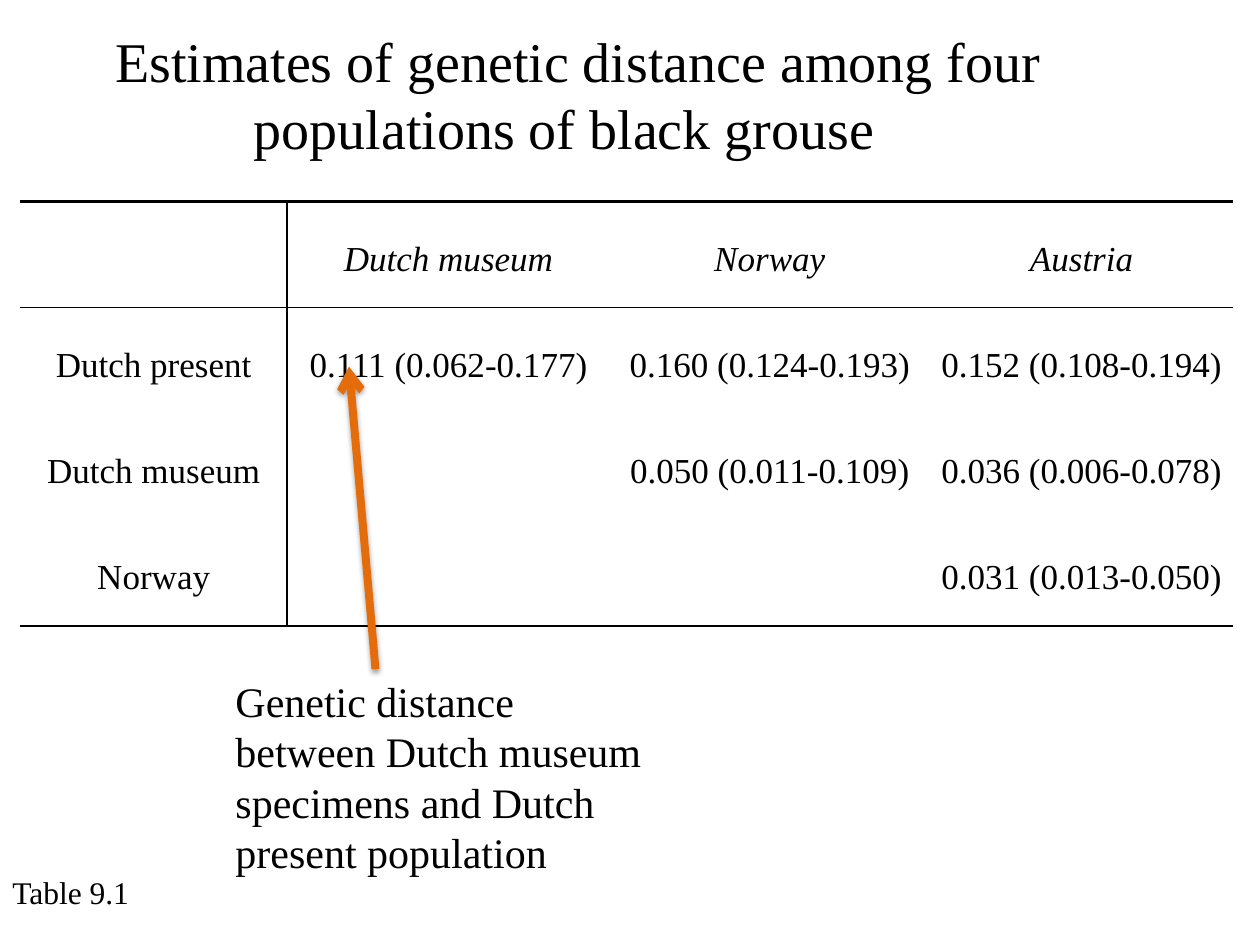
from lxml.etree import SubElement
from pptx import Presentation
from pptx.dml.color import RGBColor
from pptx.enum.shapes import MSO_CONNECTOR
from pptx.enum.text import MSO_AUTO_SIZE, PP_ALIGN
from pptx.oxml.ns import qn
from pptx.util import Inches, Pt

COLORS = {"ink": "000000", "arrow": "E46C0A"}
FONT = "Times New Roman"
COLUMNS, ROWS = 100, 75  # layout grid of the slide

HEADINGS = ["", "Dutch museum", "Norway", "Austria"]
DISTANCES = [
    ["Dutch present", "0.111 (0.062-0.177)", "0.160 (0.124-0.193)", "0.152 (0.108-0.194)"],
    ["Dutch museum", "", "0.050 (0.011-0.109)", "0.036 (0.006-0.078)"],
    ["Norway", "", "", "0.031 (0.013-0.050)"],
]


def write_text(frame, text, size=20, italic=False, align=PP_ALIGN.LEFT, spacing=None):
    paragraph = frame.paragraphs[0]
    paragraph.alignment = align
    paragraph.line_spacing = spacing
    run = paragraph.add_run()
    run.text = text
    run.font.name = FONT
    run.font.size = Pt(size)
    run.font.italic = italic
    run.font.color.rgb = RGBColor.from_string(COLORS["ink"])


def add_color(parent, color):
    fill = SubElement(parent, qn("a:solidFill"))
    return SubElement(fill, qn("a:srgbClr"), val=COLORS[color])


def set_borders(cell, widths):
    """Draw the given sides (L, R, T, B) in points; the others stay empty."""
    properties = cell._tc.get_or_add_tcPr()
    for side in "LRTB":
        width = widths.get(side, 0)
        line = SubElement(properties, qn(f"a:ln{side}"), w=str(Pt(width)))
        if width:
            add_color(line, "ink")
        else:
            SubElement(line, qn("a:noFill"))


class SlideBuilder:
    def __init__(self, presentation):
        self.slide = presentation.slides.add_slide(presentation.slide_layouts[6])
        self.column = presentation.slide_width / COLUMNS
        self.row = presentation.slide_height / ROWS

    def place(self, *lengths):
        """Turn alternating grid columns and rows into slide lengths."""
        units = (self.column, self.row)
        return [round(length * units[i % 2]) for i, length in enumerate(lengths)]

    def text(self, box, text, wrap=True, **style):
        frame = self.slide.shapes.add_textbox(*self.place(*box)).text_frame
        frame.word_wrap = wrap
        frame.auto_size = MSO_AUTO_SIZE.SHAPE_TO_FIT_TEXT
        write_text(frame, text, **style)

    def table(self, left, top, widths, height, records):
        box = self.place(left, top, sum(widths), height * len(records))
        table = self.slide.shapes.add_table(len(records), len(widths), *box).table
        table.first_row = table.horz_banding = False
        for column, width in zip(table.columns, widths):
            column.width = round(width * self.column)
        last = len(records) - 1
        for r, record in enumerate(records):
            table.rows[r].height = round(height * self.row)
            for c, text in enumerate(record):
                cell = table.cell(r, c)
                cell.margin_left = cell.margin_right = Inches(0.07)
                cell.margin_top = cell.margin_bottom = 0
                # Rules: above and below the table, under the head, beside the stub
                set_borders(cell, {
                    "L": 1 if c == 1 else 0,
                    "R": 1 if c == 0 else 0,
                    "T": {0: 1.5, 1: 1}.get(r, 0),
                    "B": {0: 1, last: 1.5}.get(r, 0),
                })
                cell.fill.background()
                if text:
                    write_text(cell.text_frame, text, italic=r == 0,
                               align=PP_ALIGN.CENTER, spacing=2.0)

    def arrow(self, start, end, color, width):
        connector = self.slide.shapes.add_connector(
            MSO_CONNECTOR.STRAIGHT, *self.place(*start, *end))
        connector.line.color.rgb = RGBColor.from_string(COLORS[color])
        connector.line.width = Pt(width)
        SubElement(connector.line._get_or_add_ln(), qn("a:tailEnd"), type="arrow")
        # Soft shadow straight below
        effects = SubElement(connector._element.spPr, qn("a:effectLst"))
        shadow = SubElement(effects, qn("a:outerShdw"), blurRad=str(Pt(3.1)),
                            dist=str(Pt(1.6)), dir="5400000", rotWithShape="0")
        SubElement(add_shadow_color(shadow), qn("a:alpha"), val="38000")


def add_shadow_color(shadow):
    return SubElement(shadow, qn("a:srgbClr"), val=COLORS["ink"])


def main():
    presentation = Presentation()
    presentation.slide_width, presentation.slide_height = Inches(10), Inches(7.5)
    builder = SlideBuilder(presentation)

    # Distance table
    builder.table(1.6, 16, [21.2, 25.6, 25.4, 24.1], 8.42, [HEADINGS, *DISTANCES])

    # Title
    builder.text((6, 1.6, 79.8, 11.8),
                 "Estimates of genetic distance among four populations of black grouse  ",
                 size=32, align=PP_ALIGN.CENTER)

    # Explanation and its arrow
    builder.text((17.7, 53.1, 35.2, 17.2),
                 "Genetic distance between Dutch museum specimens and Dutch present population",
                 size=24)
    builder.arrow((29.8, 53.1), (27.7, 29.1), "arrow", 4.5)

    # Table number
    builder.text((0, 68.8, 12, 4), "Table 9.1", wrap=False, size=18)

    presentation.save("out.pptx")


if __name__ == "__main__":
    main()
